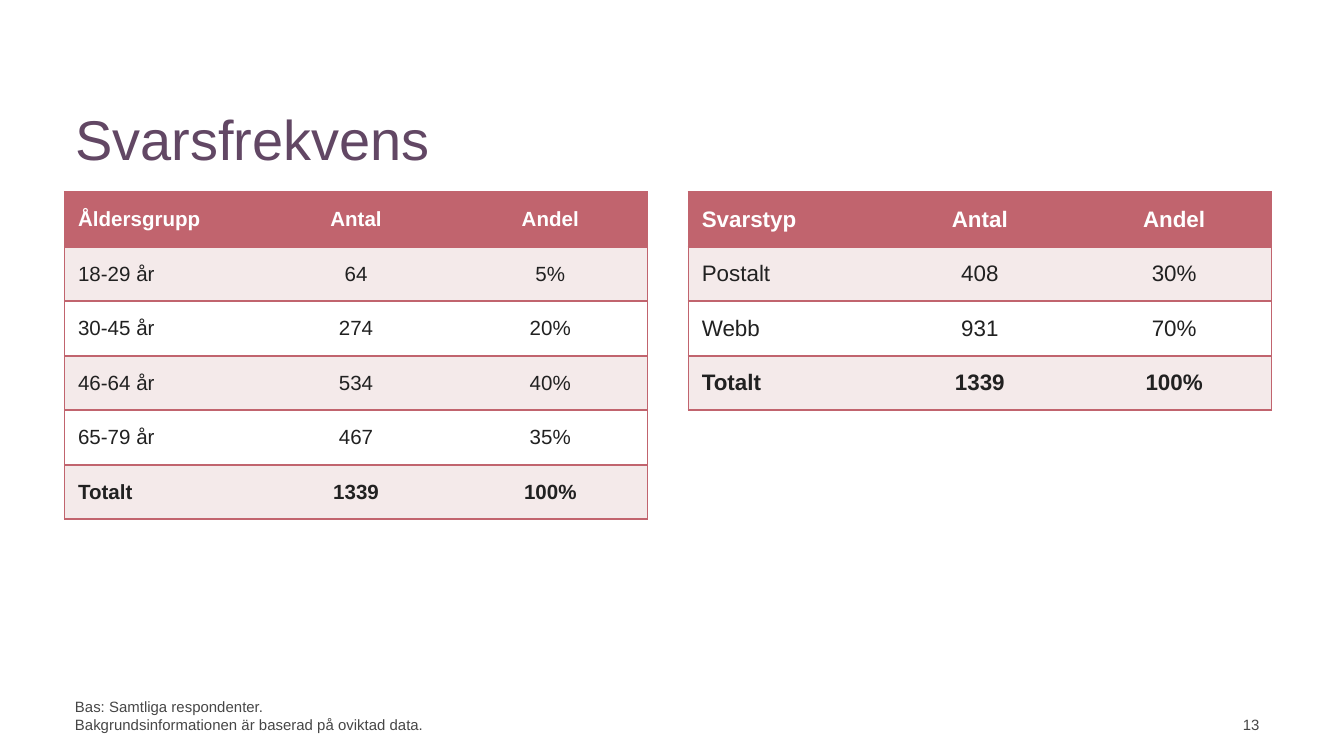
from dataclasses import dataclass

from lxml.etree import SubElement
from pptx import Presentation
from pptx.dml.color import RGBColor
from pptx.enum.text import MSO_ANCHOR, PP_ALIGN
from pptx.oxml.ns import qn
from pptx.slide import Slide
from pptx.table import _Cell
from pptx.text.text import TextFrame
from pptx.util import Pt

FONT = "Arial"
ROSE, BLUSH, WHITE = "C1646E", "F4EAEA", "FFFFFF"
PLUM, INK, GREY = "624764", "212121", "464646"
TABLE_TOP, COL_WIDTH, ROW_HEIGHT = 103, 104.1, 29.2


@dataclass
class Label:
    text: str
    left: float
    top: float
    width: float
    height: float
    size: float
    color: str
    anchor: MSO_ANCHOR = MSO_ANCHOR.BOTTOM
    align: PP_ALIGN = PP_ALIGN.LEFT


@dataclass
class FrequencyTable:
    left: float
    size: float
    rows: list[tuple[str, str, str]]


LABELS = [
    Label("Svarsfrekvens", 33.1, 53.3, 517.7, 41.8, 30, PLUM, MSO_ANCHOR.MIDDLE),
    Label("Bas: Samtliga respondenter.\nBakgrundsinformationen är baserad på oviktad data.",
          33.1, 375.1, 561.6, 21.6, 8, GREY),
    Label("13", 604.8, 375.1, 77, 21.6, 8, GREY, align=PP_ALIGN.RIGHT),
]

TABLES = [
    FrequencyTable(34.6, 11, [
        ("Åldersgrupp", "Antal", "Andel"),
        ("18-29 år", "64", "5%"),
        ("30-45 år", "274", "20%"),
        ("46-64 år", "534", "40%"),
        ("65-79 år", "467", "35%"),
        ("Totalt", "1339", "100%"),
    ]),
    FrequencyTable(368.8, 12, [
        ("Svarstyp", "Antal", "Andel"),
        ("Postalt", "408", "30%"),
        ("Webb", "931", "70%"),
        ("Totalt", "1339", "100%"),
    ]),
]


def rgb(color: str) -> RGBColor:
    return RGBColor.from_string(color)


def style_text(tf: TextFrame, size: float, color: str, align: PP_ALIGN, bold: bool = False) -> None:
    for p in tf.paragraphs:
        p.alignment = align
        for r in p.runs:
            r.font.name = FONT
            r.font.size = Pt(size)
            r.font.bold = bold
            r.font.color.rgb = rgb(color)


def add_label(s: Slide, label: Label) -> None:
    sp = s.shapes.add_textbox(Pt(label.left), Pt(label.top), Pt(label.width), Pt(label.height))
    tf = sp.text_frame
    tf.word_wrap = True
    tf.vertical_anchor = label.anchor
    tf.text = label.text
    style_text(tf, label.size, label.color, label.align)


def set_borders(cell: _Cell, visible: set[str]) -> None:
    tc_pr = cell._tc.get_or_add_tcPr()
    for side in "LRTB":
        ln = SubElement(tc_pr, qn(f"a:ln{side}"), w=str(Pt(1)))
        if side in visible:
            fill = SubElement(ln, qn("a:solidFill"))
            SubElement(fill, qn("a:srgbClr"), val=ROSE)
        else:
            SubElement(ln, qn("a:noFill"))


def add_frequency_table(s: Slide, spec: FrequencyTable) -> None:
    n_rows, n_cols = len(spec.rows), len(spec.rows[0])
    table = s.shapes.add_table(
        n_rows, n_cols, Pt(spec.left), Pt(TABLE_TOP),
        Pt(n_cols * COL_WIDTH), Pt(n_rows * ROW_HEIGHT),
    ).table
    for column in table.columns:
        column.width = Pt(COL_WIDTH)
    for i, values in enumerate(spec.rows):
        table.rows[i].height = Pt(ROW_HEIGHT)
        header = i == 0
        fill = ROSE if header else BLUSH if i % 2 else WHITE
        for j, value in enumerate(values):
            cell = table.cell(i, j)
            set_borders(cell, {"T", "B"} | {0: {"L"}, n_cols - 1: {"R"}}.get(j, set()))
            cell.fill.solid()
            cell.fill.fore_color.rgb = rgb(fill)
            cell.vertical_anchor = MSO_ANCHOR.MIDDLE
            cell.text_frame.text = value
            style_text(cell.text_frame, spec.size, WHITE if header else INK,
                       PP_ALIGN.CENTER if j else PP_ALIGN.LEFT, i in (0, n_rows - 1))


def main() -> None:
    """Build the response frequency slide."""
    prs = Presentation()
    prs.slide_width, prs.slide_height = Pt(720), Pt(405)
    s = prs.slides.add_slide(prs.slide_layouts[6])
    title, *footers = LABELS
    add_label(s, title)
    for table in TABLES:
        add_frequency_table(s, table)
    for footer in footers:
        add_label(s, footer)
    prs.save("out.pptx")


if __name__ == "__main__":
    main()
